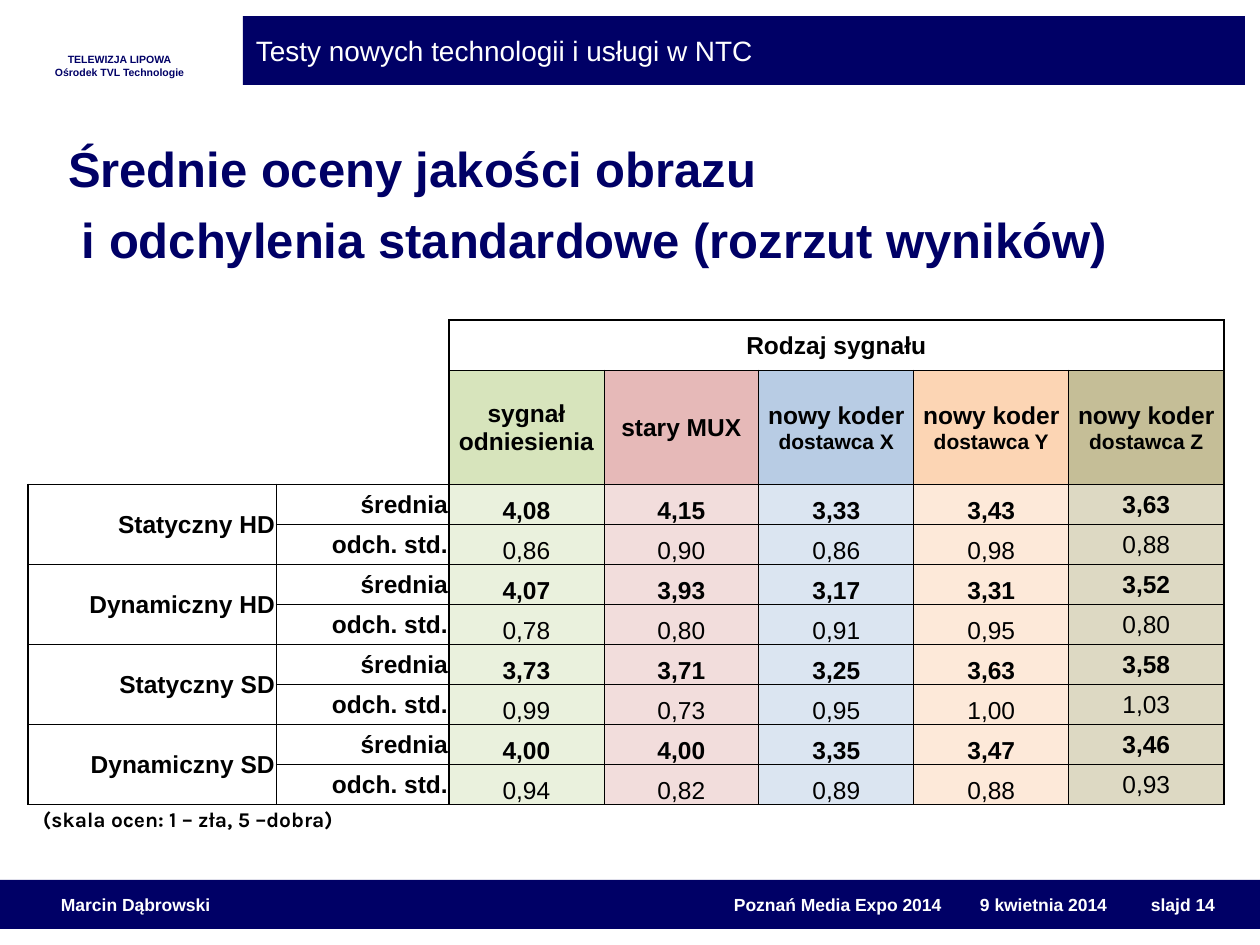
from lxml import etree
from pptx import Presentation
from pptx import util as u
from pptx.dml.color import RGBColor
from pptx.enum import shapes, text
from pptx.oxml.ns import qn

PX = 7257  # EMU in one px, 126 px to the inch
NAVY, BLACK, WHITE = "000066", "000000", "FFFFFF"
LEFT, MID, RIGHT = text.PP_ALIGN.LEFT, text.PP_ALIGN.CENTER, text.PP_ALIGN.RIGHT
CENTRE, LOW = text.MSO_ANCHOR.MIDDLE, text.MSO_ANCHOR.BOTTOM


def hue(code):
    return RGBColor.from_string(code)


def write(frame, words, size=14, small=12, bold=True, color=BLACK, font="Arial",
          align=LEFT, anchor=CENTRE, gap=0, pad=(13, 6, 13, 6)):
    """Fill a frame: a newline starts a paragraph, a bar a line in the small size."""
    frame.word_wrap = True
    frame.vertical_anchor = anchor
    (frame.margin_left, frame.margin_top,
     frame.margin_right, frame.margin_bottom) = [n * PX for n in pad]
    for i, part in enumerate(words.split("\n")):
        para = frame.add_paragraph() if i else frame.paragraphs[0]
        para.alignment = align
        para.space_before = u.Pt(gap if i else 0)
        for j, line in enumerate(part.split("|")):
            if j:
                para.add_line_break()
            run = para.add_run()
            run.text = line
            run.font.name, run.font.bold = font, bold
            run.font.size = u.Pt(small if j else size)
            run.font.color.rgb = hue(color)


deck = Presentation()
deck.slide_width, deck.slide_height = u.Inches(10), u.Inches(7.5)
slide = deck.slides.add_slide(deck.slide_layouts[5])

# Sender, header bar and footer bar
box = slide.shapes.add_textbox(25 * PX, 49 * PX, 189 * PX, 33 * PX)
write(box.text_frame, "TELEWIZJA LIPOWA\nOśrodek TVL Technologie",
      size=6, color=NAVY, align=MID, pad=(0, 0, 0, 0))

bars = [
    ((243, 16, 1002, 69), "Testy nowych technologii i usługi w NTC", 16, False, 13),
    ((0, 880, 1260, 49),
     "Marcin Dąbrowski\tPoznań Media Expo 2014\t9 kwietnia 2014\tslajd 14", 10, True, 61),
]
for place, words, size, bold, inset in bars:
    bar = slide.shapes.add_shape(shapes.MSO_SHAPE.RECTANGLE, *[n * PX for n in place])
    bar.shadow.inherit = False
    bar.fill.solid()
    bar.fill.fore_color.rgb = hue(NAVY)
    bar.line.fill.background()
    write(bar.text_frame, words, size=size, bold=bold, color=WHITE, pad=(inset, 6, 13, 6))

# Tab stops of the footer, measured from its left inset
stops = etree.SubElement(bar.text_frame.paragraphs[0]._p.get_or_add_pPr(), qn("a:tabLst"))
for stop in (673, 919, 1090):
    etree.SubElement(stops, qn("a:tab"), pos=str(stop * PX), algn="l")

# Title
title = slide.shapes.title
title.left, title.top, title.width, title.height = [n * PX for n in (55, 132, 1162, 145)]
write(title.text_frame, "Średnie oceny jakości obrazu\ni odchylenia standardowe (rozrzut wyników)",
      size=28, color=NAVY, anchor=text.MSO_ANCHOR.TOP, gap=7.5)
title.text_frame.paragraphs[1]._p.get_or_add_pPr().set("marL", str(14 * PX))

# Ratings table
heads = ["sygnał odniesienia", "stary MUX", "nowy koder|dostawca X",
         "nowy koder|dostawca Y", "nowy koder|dostawca Z"]
dark = ["D7E4BC", "E6B9B8", "B8CCE4", "FCD5B4", "C5BE97"]
light = ["EAF1DD", "F2DDDC", "DBE5F1", "FDE9D9", "DDD9C3"]
tests = ["Statyczny HD", "Dynamiczny HD", "Statyczny SD", "Dynamiczny SD"]
marks = """4,08 4,15 3,33 3,43 3,63
0,86 0,90 0,86 0,98 0,88
4,07 3,93 3,17 3,31 3,52
0,78 0,80 0,91 0,95 0,80
3,73 3,71 3,25 3,63 3,58
0,99 0,73 0,95 1,00 1,03
4,00 4,00 3,35 3,47 3,46
0,94 0,82 0,89 0,88 0,93"""

rows = [["", "", "Rodzaj sygnału", "", "", "", ""], ["", ""] + heads]
for i, line in enumerate(marks.split("\n")):
    stat = "odch. std." if i % 2 else "średnia"
    rows.append(["" if i % 2 else tests[i // 2], stat] + line.split())

wide = [248, 173] + [155] * 5
tall = [40, 114] + [40] * 8
grid = slide.shapes.add_table(len(rows), len(wide), 28 * PX, 320 * PX,
                              sum(wide) * PX, sum(tall) * PX).table
grid.first_row = grid.horz_banding = False
for col, size in zip(grid.columns, wide):
    col.width = size * PX
for row, size in zip(grid.rows, tall):
    row.height = size * PX
grid.cell(0, 2).merge(grid.cell(0, 6))
for r in range(2, 10, 2):
    grid.cell(r, 0).merge(grid.cell(r + 1, 0))

# Rule weights in points, by grid line
down = [1, 0.5, 1, 0.5, 0.5, 0.5, 0.5, 1]
cross = [1, 1] + [1, 0.5] * 4 + [1]
for r, row in enumerate(rows):
    for c, words in enumerate(row):
        cell = grid.cell(r, c)
        if r < 2 and c < 2:
            cell.fill.background()
            continue
        high = cell.span_height if cell.is_merge_origin else 1
        span = cell.span_width if cell.is_merge_origin else 1
        if not cell.is_spanned:
            edges = {"L": down[c], "R": down[c + span], "T": cross[r], "B": cross[r + high]}
            for side, weight in edges.items():
                rule = etree.SubElement(cell._tc.get_or_add_tcPr(), qn("a:ln" + side),
                                        w=str(u.Pt(weight)))
                ink = etree.SubElement(rule, qn("a:solidFill"))
                etree.SubElement(ink, qn("a:srgbClr"), val=BLACK)
        cell.fill.solid()
        shade = WHITE if r == 0 or c < 2 else (dark if r == 1 else light)[c - 2]
        cell.fill.fore_color.rgb = hue(shade)
        if words:
            value = r > 1 and c > 1
            write(cell.text_frame, words, bold=not (value and r % 2),
                  align=RIGHT if r > 1 and c < 2 else MID, pad=(1, 1, 1, 0))
            cell.margin_left = cell.margin_top = cell.margin_right = PX
            cell.margin_bottom = 0
            cell.vertical_anchor = LOW if value and c < 6 else CENTRE

# Scale note
note = slide.shapes.add_textbox(30 * PX, 800 * PX, 530 * PX, 38 * PX)
write(note.text_frame, "(skala ocen: 1 – zła, 5 –dobra)", size=12, font="Karla")

deck.save("out.pptx")
